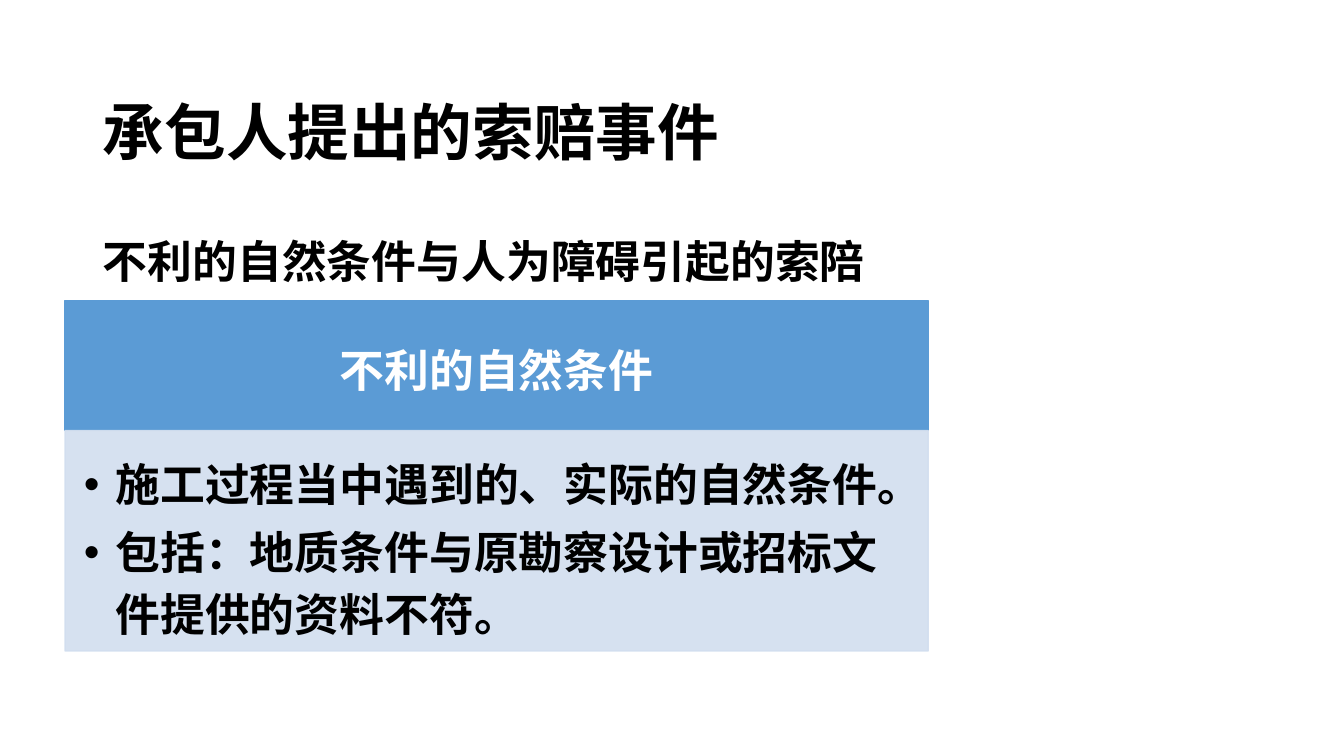
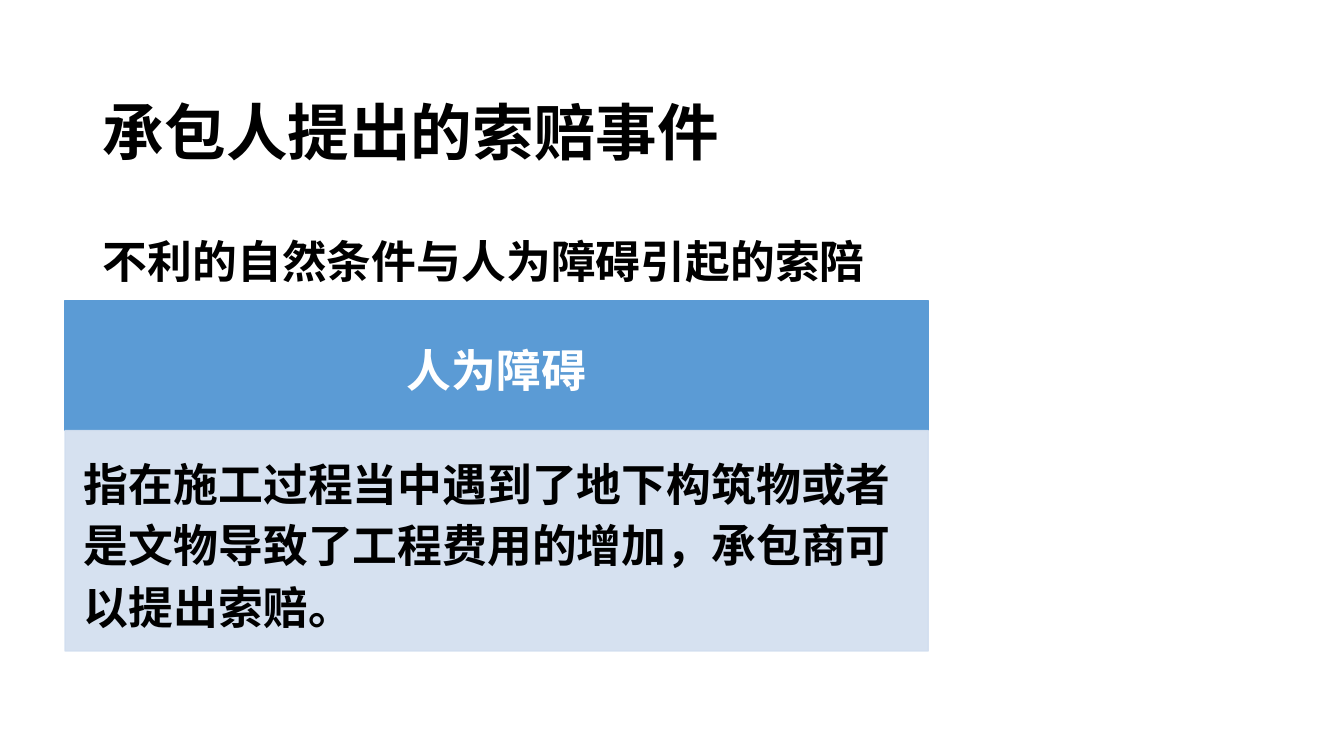
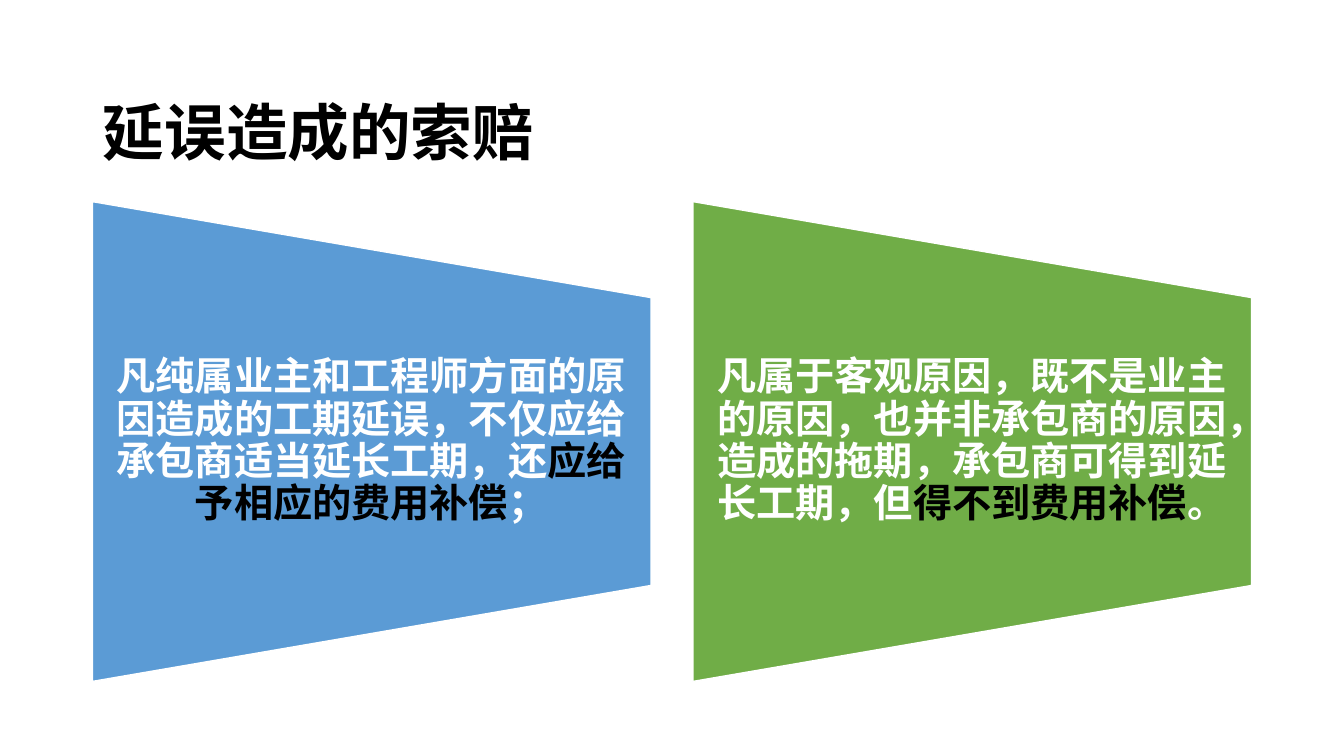
from dataclasses import dataclass
from lxml.etree import SubElement as Sub
from pptx import Presentation
from pptx.dml.color import RGBColor as Rgb
from pptx.enum.lang import MSO_LANGUAGE_ID as Lang
from pptx.enum.shapes import MSO_SHAPE as Kind
from pptx.enum.text import MSO_ANCHOR as Anchor, MSO_AUTO_SIZE as Fit, PP_ALIGN as Align
from pptx.oxml.ns import qn
from pptx.util import Pt


@dataclass(frozen=True)
class Theme:
    font: str = "Times New Roman"
    ink: str = "000000"
    paper: str = "FFFFFF"
    blue: str = "5B9BD5"
    pale: str = "D2DEEF"
    green: str = "70AD47"
    title: int = 44
    text: int = 32
    note: int = 28


THEME = Theme()
EDGE = 88
CLAIM = "承包人提出的索赔事件"
CAUSE = "不利的自然条件与人为障碍引起的索陪"


def px(num):
    return int(num * 9525)


def place(shape, box):
    shape.left, shape.top, shape.width, shape.height = map(px, box)


def setup(frame, pads=(10, 5, 10, 5), anchor=Anchor.TOP):
    frame.word_wrap = True
    frame.auto_size = Fit.NONE
    frame.vertical_anchor = anchor
    (frame.margin_left, frame.margin_top,
     frame.margin_right, frame.margin_bottom) = map(px, pads)


def style(para, size, color, lead, align=Align.LEFT):
    para.alignment = align
    para.line_spacing = lead
    font = para.font
    font.name = THEME.font
    font.size = Pt(size)
    font.bold = True
    font.color.rgb = Rgb.from_string(color)
    font.language_id = Lang.SIMPLIFIED_CHINESE


def bullet(para, mark=None, dent=0):
    props = para._p.get_or_add_pPr()
    props.set("marL", str(px(dent)))
    props.set("indent", str(px(-dent)))
    if mark:
        Sub(props, qn("a:buFont"), typeface="Arial")
        Sub(props, qn("a:buChar"), char=mark)
    else:
        Sub(props, qn("a:buNone"))


def paint(shape, fill, line):
    shape.shadow.inherit = False
    shape.fill.solid()
    shape.fill.fore_color.rgb = Rgb.from_string(fill)
    shape.line.color.rgb = Rgb.from_string(line)
    shape.line.width = Pt(1)


def fade(shape, part):
    for color in shape._element.spPr.iter(qn("a:srgbClr")):
        Sub(color, qn("a:alpha"), val=str(part * 1000))


def add_page(deck, layout, title):
    page = deck.slides.add_slide(deck.slide_layouts[layout])
    head = page.shapes.title
    place(head, (EDGE, 38, 1104, 139))
    head.text = title
    setup(head.text_frame, anchor=Anchor.MIDDLE)
    style(head.text_frame.paragraphs[0], THEME.title, THEME.ink, 1.5)
    return page


def add_lead(page, text):
    body = page.placeholders[1]
    place(body, (EDGE, 192, 1104, 457))
    body.text = text
    setup(body.text_frame)
    para = body.text_frame.paragraphs[0]
    bullet(para)
    para.space_before = Pt(10)
    style(para, THEME.text, THEME.ink, 1.5)


def add_block(page, box, fill):
    block = page.shapes.add_shape(Kind.RECTANGLE, *map(px, box))
    paint(block, fill, fill)
    return block


def add_panel(page, head, items):
    left, top, wide, high = 62, 286, 822, 124
    bar = add_block(page, (left, top, wide, high), THEME.blue)
    bar.text_frame.text = head
    setup(bar.text_frame, (24, 13, 24, 13), Anchor.MIDDLE)
    style(bar.text_frame.paragraphs[0], THEME.text, THEME.paper, 1.14, Align.CENTER)

    area = add_block(page, (left, top + high, wide, 210), THEME.pale)
    fade(area, 90)
    frame = area.text_frame
    frame.text = "\n".join(items)
    setup(frame, (18, 18, 24, 27))
    for para in frame.paragraphs:
        if len(items) > 1:
            bullet(para, "•", 30)
        para.space_after = Pt(5)
        style(para, THEME.text, THEME.ink, 1.14)


def add_wedge(page, left, fill, parts):
    top, wide, high = 192, 532, 457
    shift = (wide - high) / 2
    wedge = page.shapes.add_shape(
        Kind.FLOWCHART_MANUAL_OPERATION,
        *map(px, (left + shift, top - shift, high, wide)))
    wedge.rotation = 270
    paint(wedge, fill, THEME.paper)

    inset = high / 5
    label = page.shapes.add_textbox(
        *map(px, (left, top + inset, wide, high - 2 * inset)))
    setup(label.text_frame, (18, 0, 19, 0), Anchor.MIDDLE)
    para = label.text_frame.paragraphs[0]
    style(para, THEME.note, THEME.paper, 0.9, Align.CENTER)
    for part, color in zip(parts, (THEME.paper, THEME.ink, THEME.paper)):
        run = para.add_run()
        run.text = part
        run.font.color.rgb = Rgb.from_string(color)


def main():
    deck = Presentation()
    deck.slide_width, deck.slide_height = px(1280), px(720)

    panels = (
        ("不利的自然条件", ("施工过程当中遇到的、实际的自然条件。",
                     "包括：地质条件与原勘察设计或招标文件提供的资料不符。")),
        ("人为障碍", ("指在施工过程当中遇到了地下构筑物或者是文物导致了工程费用的增加，承包商可以提出索赔。",)),
    )
    for head, items in panels:
        page = add_page(deck, 1, CLAIM)
        add_lead(page, CAUSE)
        add_panel(page, head, items)

    page = add_page(deck, 5, "延误造成的索赔")
    wedges = (
        (THEME.blue, ("凡纯属业主和工程师方面的原因造成的工期延误，不仅应给承包商适当延长工期，还",
                      "应给予相应的费用补偿", "；")),
        (THEME.green, ("凡属于客观原因，既不是业主的原因，也并非承包商的原因，造成的拖期，承包商可得到延长工期，但",
                       "得不到费用补偿", "。")),
    )
    for i, (fill, parts) in enumerate(wedges):
        add_wedge(page, EDGE + i * 572, fill, parts)

    deck.save("out.pptx")


if __name__ == "__main__":
    main()
